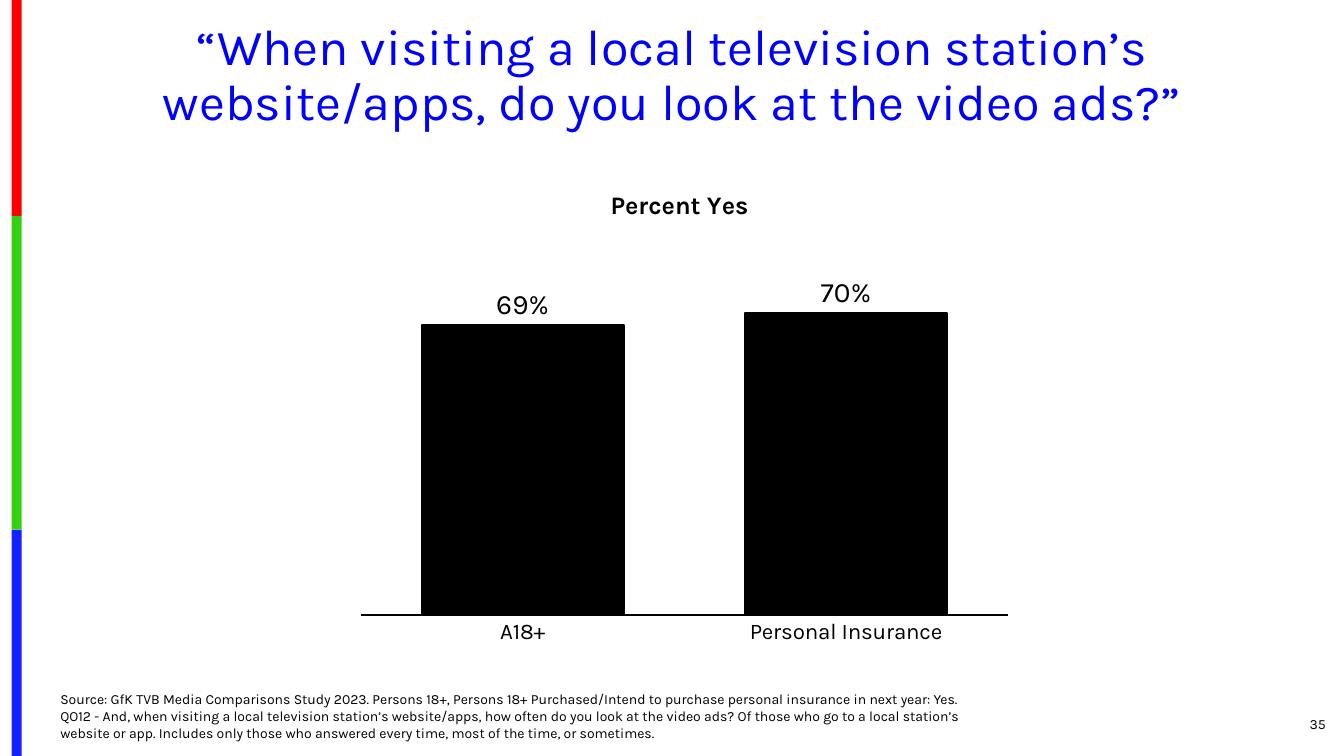
import pptx
import pptx.chart.data
import pptx.dml.color
import pptx.enum.chart
import pptx.enum.shapes
import pptx.enum.text
import pptx.util
from lxml import etree

Pt = pptx.util.Pt
ALIGN = pptx.enum.text.PP_ALIGN
ANCHOR = pptx.enum.text.MSO_ANCHOR
FONT = "Karla"

TITLE = "“When visiting a local television station’s website/apps, do you look at the video ads?”"
SOURCE = (
    "Source: GfK TVB Media Comparisons Study 2023. Persons 18+, Persons 18+ "
    "Purchased/Intend to purchase personal insurance in next year: Yes. "
    "QO12 - And, when visiting a local television station’s website/apps, how often "
    "do you look at the video ads? Of those who go to a local station’s website or app. "
    "Includes only those who answered every time, most of the time, or sometimes."
)
CHART_TITLE = "Percent Yes"
ANSWERS = {"A18+": 0.69, "Personal Insurance": 0.7}
STRIPES = [("FE0000", 154.4), ("36CF12", 224), ("1322FE", 161.6)]
TEXTS = [
    (TITLE, (33.1, 12.2, 894.2, 85.7), 36, "0000FF", ALIGN.CENTER, ANCHOR.TOP, 0.9),
    ("35", (876.2, 502.6, 77.8, 28.8), 10, "000000", ALIGN.RIGHT, ANCHOR.MIDDLE, 1),
    (SOURCE, (36, 488.9, 666, 43.9), 10, "000000", ALIGN.LEFT, ANCHOR.BOTTOM, 1),
]
CHART_BOX = (234, 85.7, 509.8, 412.6)
TITLE_LAYOUT = {"xMode": "edge", "yMode": "edge", "x": 0.39, "y": 0.11}
PLOT_LAYOUT = {"layoutTarget": "inner", "xMode": "edge", "yMode": "edge",
               "x": 0.047, "y": 0, "w": 0.906, "h": 0.858}


def rgb(color):
    return pptx.dml.color.RGBColor.from_string(color)


def style(font, size, color="000000", bold=False):
    font.name = FONT
    font.size = Pt(size)
    font.bold = bold
    font.color.rgb = rgb(color)


def outline(line):
    line.color.rgb = rgb("000000")
    line.width = Pt(1.5)


def place(parent, settings):
    ns = "{http://schemas.openxmlformats.org/drawingml/2006/chart}"
    layout = parent.find(ns + "layout")
    if layout is None:
        layout = etree.Element(ns + "layout")
        tx = parent.find(ns + "tx")
        parent.insert(0 if tx is None else 1, layout)
    for child in list(layout):
        layout.remove(child)
    manual = etree.SubElement(layout, ns + "manualLayout")
    for name, value in settings.items():
        etree.SubElement(manual, ns + name).set("val", str(value))


prs = pptx.Presentation()
prs.slide_width, prs.slide_height = Pt(960), Pt(540)
s = prs.slides.add_slide(prs.slide_layouts[6])

top = 0
for color, height in STRIPES:
    sp = s.shapes.add_shape(pptx.enum.shapes.MSO_SHAPE.RECTANGLE,
                            Pt(8.3), Pt(top), Pt(7.2), Pt(height))
    sp.shadow.inherit = False
    sp.fill.solid()
    sp.fill.fore_color.rgb = rgb(color)
    sp.line.fill.background()
    top += height

for text, box, size, color, align, anchor, spacing in TEXTS:
    tf = s.shapes.add_textbox(*map(Pt, box)).text_frame
    tf.word_wrap = True
    tf.vertical_anchor = anchor
    p = tf.paragraphs[0]
    p.text = text
    p.alignment = align
    p.line_spacing = spacing
    style(p.font, size, color)

data = pptx.chart.data.CategoryChartData(number_format="0%")
data.categories = list(ANSWERS)
data.add_series("Series 1", list(ANSWERS.values()))
chart = s.shapes.add_chart(pptx.enum.chart.XL_CHART_TYPE.COLUMN_CLUSTERED,
                           *map(Pt, CHART_BOX), data).chart
style(chart.font, 10)
chart.has_legend = False
chart.has_title = True
p = chart.chart_title.text_frame.paragraphs[0]
p.text = CHART_TITLE
style(p.font, 18, bold=True)
chart.chart_title.include_in_layout = False

value_axis = chart.value_axis
value_axis.minimum_scale, value_axis.maximum_scale = 0.45, 0.86
value_axis.has_major_gridlines = False
value_axis.visible = False
category_axis = chart.category_axis
category_axis.major_tick_mark = pptx.enum.chart.XL_TICK_MARK.NONE
style(category_axis.tick_labels.font, 16)
outline(category_axis.format.line)

plot = chart.plots[0]
plot.gap_width = 60
plot.vary_by_categories = False
bars = plot.series[0]
bars.format.fill.solid()
bars.format.fill.fore_color.rgb = rgb("000000")
outline(bars.format.line)
labels = bars.data_labels
labels.show_value = True
labels.number_format = "0%"
labels.number_format_is_linked = False
labels.position = pptx.enum.chart.XL_LABEL_POSITION.OUTSIDE_END
style(labels.font, 20)

place(chart.chart_title._element, TITLE_LAYOUT)
place(plot._element.getparent(), PLOT_LAYOUT)

prs.save("out.pptx")
